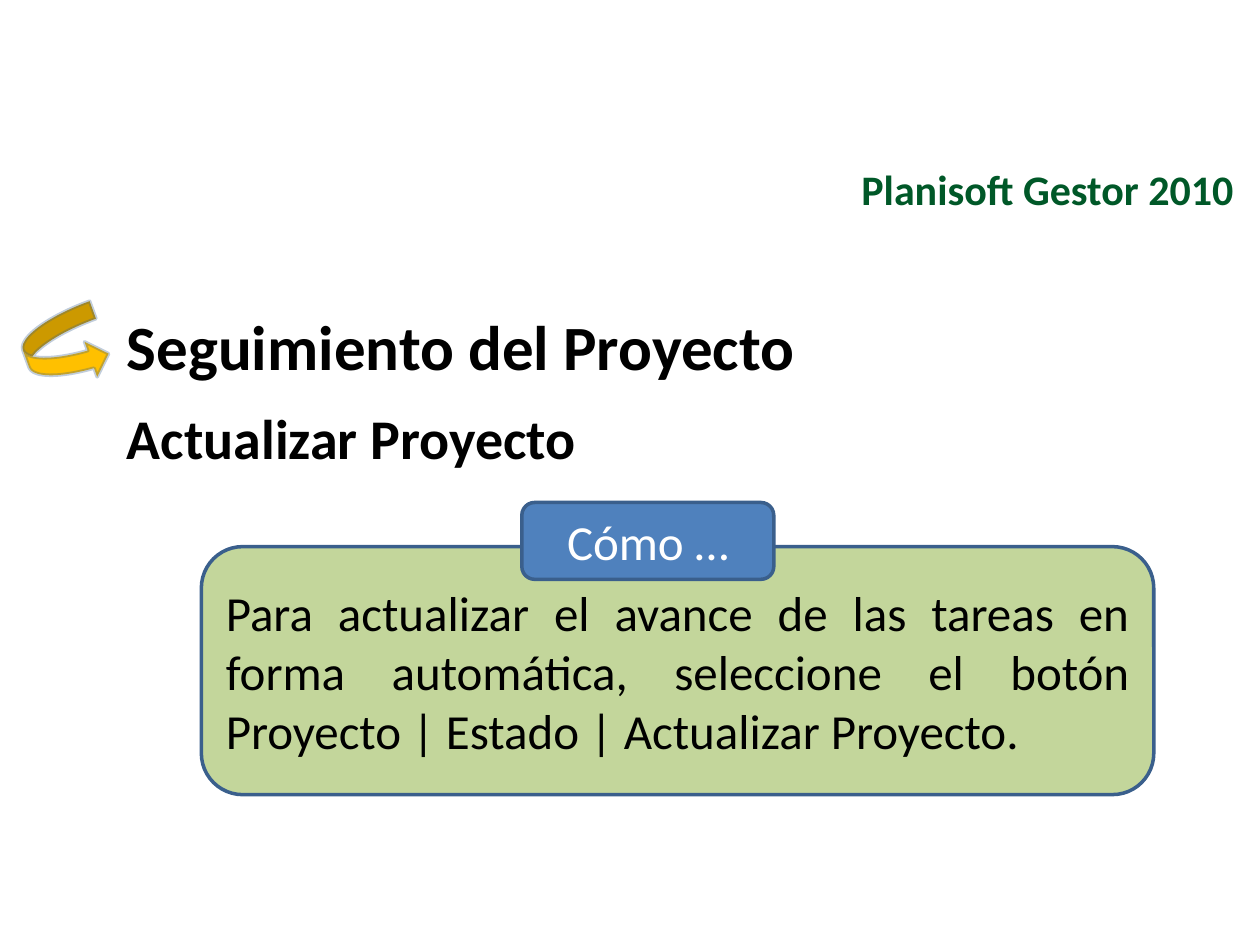
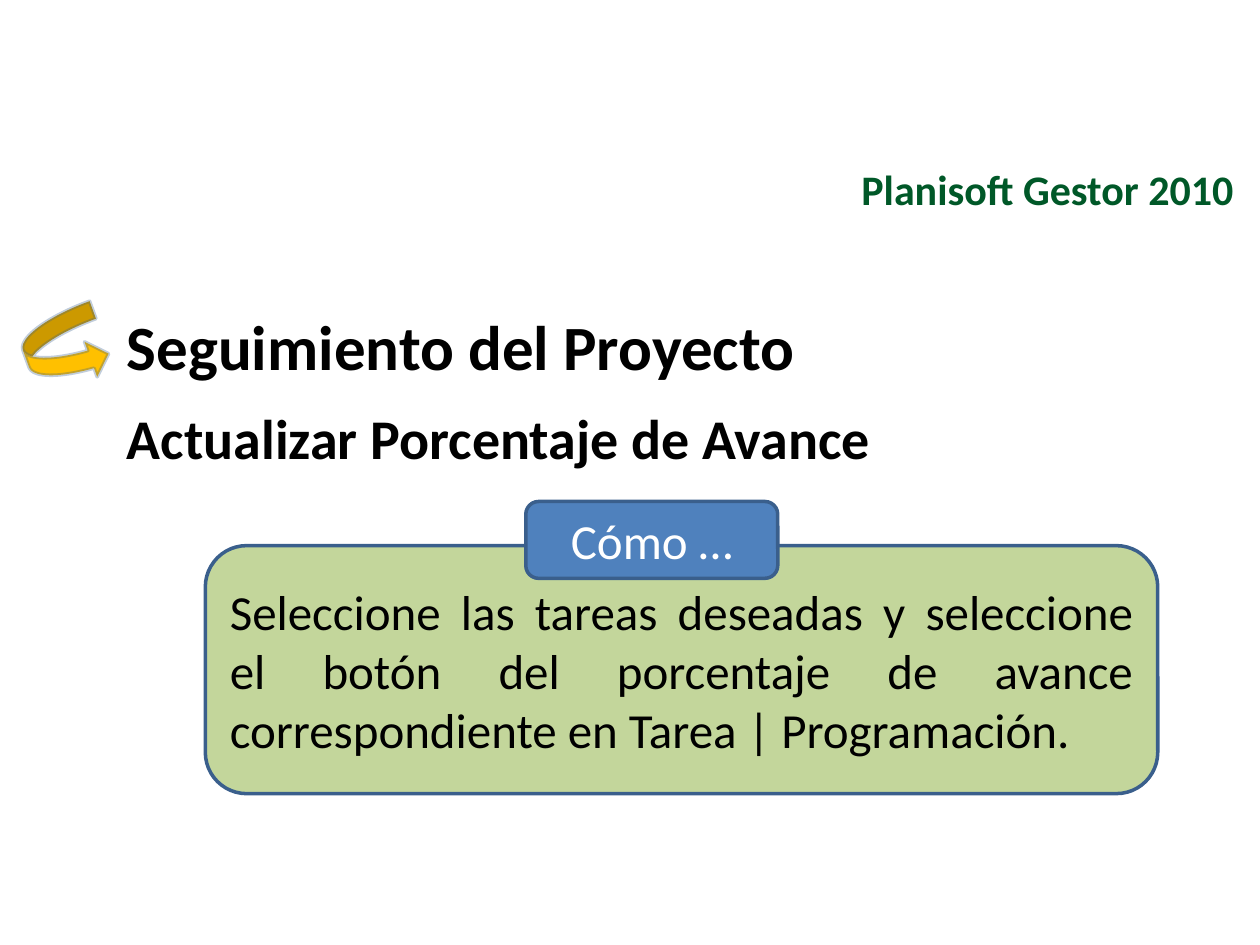
from lxml import etree
from pptx import Presentation
from pptx.dml.color import RGBColor
from pptx.enum.shapes import MSO_SHAPE
from pptx.enum.text import MSO_ANCHOR, PP_ALIGN
from pptx.oxml.ns import qn
from pptx.util import Cm, Pt

ROUNDED = MSO_SHAPE.ROUNDED_RECTANGLE
CURVED_ARROW = MSO_SHAPE.CURVED_RIGHT_ARROW
MIDDLE, TOP = MSO_ANCHOR.MIDDLE, MSO_ANCHOR.TOP
LEFT, RIGHT, CENTER, JUSTIFY = (
    PP_ALIGN.LEFT, PP_ALIGN.RIGHT, PP_ALIGN.CENTER, PP_ALIGN.JUSTIFY)

FONT = "Calibri"
BLACK, WHITE = "000000", "FFFFFF"
BRAND_GREEN, PANEL_GREEN = "005828", "C3D69B"
TAB_BLUE, OUTLINE_BLUE = "4F81BD", "3A5F8C"
ARROW_GOLD = "FFC000"

HEADER_TEXT = "Planisoft Gestor 2010"
SECTION = "Seguimiento del Proyecto"
TAB_TEXT = "Cómo …"
STEPS = [
    ("Actualizar Proyecto",
     "Para actualizar el avance de las tareas en forma automática, "
     "seleccione el botón Proyecto | Estado | Actualizar Proyecto.",
     (4.06, 10.13)),
    ("Actualizar Porcentaje de Avance",
     "Seleccione las tareas deseadas y seleccione el botón del porcentaje "
     "de avance correspondiente en Tarea | Programación.",
     (4.14, 10.11)),
]


def color(hex_value):
    return RGBColor.from_string(hex_value)


def style_para(para, size, hex_value, align, bold=False, after=0):
    para.alignment = align
    para.space_after = Pt(after)
    for span in para.runs:
        span.font.name = FONT
        span.font.size = Pt(size)
        span.font.bold = bold
        span.font.color.rgb = color(hex_value)


def add_text_box(page, box, text, anchor):
    frame = page.shapes.add_textbox(*map(Cm, box)).text_frame
    frame.word_wrap = True
    frame.vertical_anchor = anchor
    frame.text = text
    return frame


def add_filled_shape(page, kind, box, fill):
    shape = page.shapes.add_shape(kind, *map(Cm, box))
    shape.shadow.inherit = False
    shape.fill.solid()
    shape.fill.fore_color.rgb = color(fill)
    shape.line.color.rgb = color(OUTLINE_BLUE)
    shape.line.width = Pt(2)
    return shape


def add_label(page, box, fill, text, hex_value, align, after=0):
    frame = add_filled_shape(page, ROUNDED, box, fill).text_frame
    frame.word_wrap = True
    frame.vertical_anchor = MIDDLE
    frame.text = text
    style_para(frame.paragraphs[0], 28, hex_value, align, after=after)


def add_header(page, box):
    frame = add_text_box(page, box, HEADER_TEXT, MIDDLE)
    style_para(frame.paragraphs[0], 24, BRAND_GREEN, RIGHT, bold=True)


def add_titles(page, box, topic):
    frame = add_text_box(page, box, f"{SECTION}\n{topic}", TOP)
    for para, size in zip(frame.paragraphs, (36, 32)):
        properties = para._p.get_or_add_pPr()
        properties.set("marL", str(Cm(0.95)))
        properties.set("indent", str(-Cm(0.95)))
        style_para(para, size, BLACK, LEFT, bold=True, after=12)


def add_section_arrow(page, box):
    arrow = add_filled_shape(page, CURVED_ARROW, box, ARROW_GOLD)
    arrow.rotation = 340.1
    line_color = arrow.line._ln.find(".//" + qn("a:srgbClr"))
    etree.SubElement(line_color, qn("a:alpha"), val="31000")


def add_how_to(page, left, top, instructions):
    add_label(page, (left, top + 0.89, 19.2, 5), PANEL_GREEN,
              instructions, BLACK, JUSTIFY, after=6)
    add_label(page, (left + 6.46, top, 5.08, 1.55), TAB_BLUE,
              TAB_TEXT, WHITE, CENTER)


def add_step_slide(deck, topic, instructions, corner):
    page = deck.slides.add_slide(deck.slide_layouts[6])
    add_header(page, (13.69, 2.92, 11.43, 1.75))
    add_titles(page, (2.31, 6.07, 21.82, 4.06), topic)
    add_section_arrow(page, (0.51, 6.3, 1.6, 1.5))
    add_how_to(page, *corner, instructions)


def main():
    deck = Presentation()
    deck.slide_width, deck.slide_height = Cm(25.4), Cm(19.05)
    for step in STEPS:
        add_step_slide(deck, *step)
    deck.save("out.pptx")


if __name__ == "__main__":
    main()
